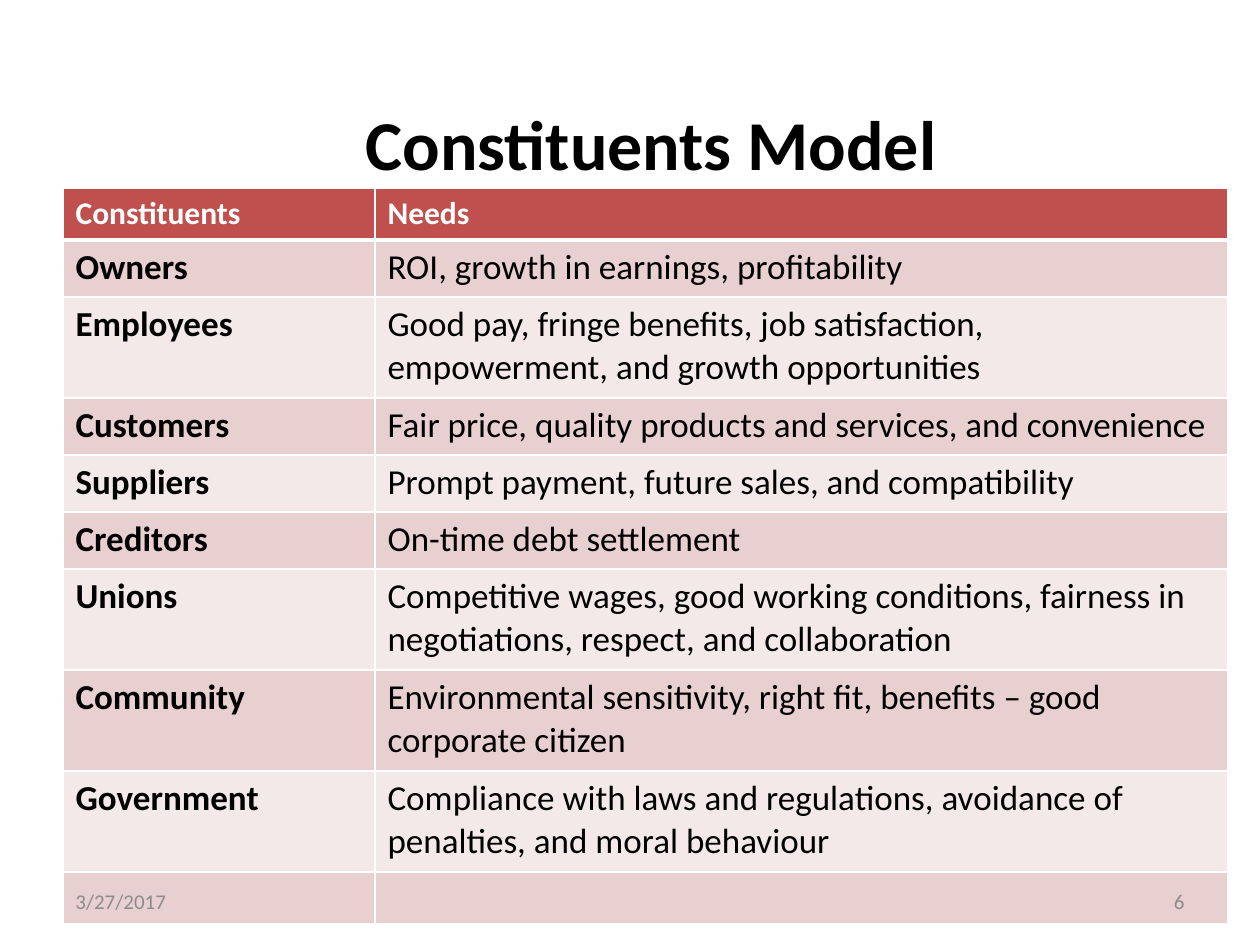
import dataclasses

import lxml.etree
import pptx
import pptx.dml.color
import pptx.enum.text
import pptx.oxml.ns
import pptx.util

EMU_PER_PX = 914400 / 126
ALIGN = pptx.enum.text.PP_ALIGN
ANCHOR = pptx.enum.text.MSO_ANCHOR


@dataclasses.dataclass(frozen=True)
class Theme:
    font: str = "Calibri"
    ink: str = "000000"
    white: str = "FFFFFF"
    muted: str = "8C8C8C"
    header: str = "C0504D"
    bands: tuple = ("E8D0D0", "F4E9E9")
    title_size: int = 40
    header_size: int = 18
    body_size: int = 20
    footer_size: int = 12
    border: int = 1
    header_border: int = 3


THEME = Theme()
COLUMN_WIDTHS = (312, 853)
EDGE_ROW, ONE_LINE_ROW, TWO_LINE_ROW = 52, 57, 101
HEADINGS = ("Constituents", "Needs")
CONSTITUENTS = (
    ("Owners", "ROI, growth in earnings, profitability", ONE_LINE_ROW),
    ("Employees", "Good pay, fringe benefits, job satisfaction,  empowerment, and growth opportunities", TWO_LINE_ROW),
    ("Customers", "Fair price, quality products and services, and convenience", ONE_LINE_ROW),
    ("Suppliers", "Prompt payment, future sales, and compatibility", ONE_LINE_ROW),
    ("Creditors", "On-time debt settlement", ONE_LINE_ROW),
    ("Unions", "Competitive wages, good working conditions, fairness in negotiations, respect, and collaboration", TWO_LINE_ROW),
    ("Community", "Environmental sensitivity, right fit, benefits – good corporate citizen", TWO_LINE_ROW),
    ("Government", "Compliance with laws and regulations, avoidance of penalties, and moral behaviour", TWO_LINE_ROW),
)


def px(length):
    return pptx.util.Emu(round(length * EMU_PER_PX))


def color(value):
    return pptx.dml.color.RGBColor.from_string(value)


def write_text(text_frame, text, *, size, ink=THEME.ink, bold=False, align=ALIGN.LEFT):
    paragraph = text_frame.paragraphs[0]
    paragraph.alignment = align
    run = paragraph.add_run()
    run.text = text
    run.font.name = THEME.font
    run.font.size = pptx.util.Pt(size)
    run.font.bold = bold
    run.font.color.rgb = color(ink)


def add_title(slide, text):
    title = slide.shapes.title
    title.left, title.top, title.width, title.height = map(px, (84, 63, 1134, 158))
    title.text_frame.vertical_anchor = ANCHOR.MIDDLE
    write_text(title.text_frame, text, size=THEME.title_size, bold=True, align=ALIGN.CENTER)


def add_footer(slide, text, left, align):
    box = slide.shapes.add_textbox(px(left), px(876), px(294), px(50))
    box.text_frame.word_wrap = True
    box.text_frame.vertical_anchor = ANCHOR.MIDDLE
    write_text(box.text_frame, text, size=THEME.footer_size, ink=THEME.muted, align=align)


def format_cell(cell, fill, top=THEME.border, bottom=THEME.border):
    properties = cell._tc.get_or_add_tcPr()
    qualified = pptx.oxml.ns.qn
    widths = {"lnL": THEME.border, "lnR": THEME.border, "lnT": top, "lnB": bottom}
    for side, width in widths.items():
        line = lxml.etree.SubElement(properties, qualified(f"a:{side}"), w=str(pptx.util.Pt(width)))
        solid = lxml.etree.SubElement(line, qualified("a:solidFill"))
        lxml.etree.SubElement(solid, qualified("a:srgbClr"), val=THEME.white)
    cell.fill.solid()
    cell.fill.fore_color.rgb = color(fill)


def add_constituents_table(slide):
    heights = [EDGE_ROW, *(height for _, _, height in CONSTITUENTS), EDGE_ROW]
    frame = slide.shapes.add_table(
        len(heights), len(COLUMN_WIDTHS), px(63), px(188), px(sum(COLUMN_WIDTHS)), px(sum(heights))
    )
    table = frame.table
    for column, width in zip(table.columns, COLUMN_WIDTHS):
        column.width = px(width)
    for row, height in zip(table.rows, heights):
        row.height = px(height)

    for cell, heading in zip(table.rows[0].cells, HEADINGS):
        format_cell(cell, THEME.header, bottom=THEME.header_border)
        write_text(cell.text_frame, heading, size=THEME.header_size, ink=THEME.white, bold=True)

    for index in range(1, len(heights)):
        top = THEME.header_border if index == 1 else THEME.border
        for cell in table.rows[index].cells:
            format_cell(cell, THEME.bands[(index - 1) % 2], top=top)

    for index, (name, needs, _) in enumerate(CONSTITUENTS, start=1):
        write_text(table.cell(index, 0).text_frame, name, size=THEME.body_size, bold=True)
        write_text(table.cell(index, 1).text_frame, needs, size=THEME.body_size)


def main():
    presentation = pptx.Presentation()
    presentation.slide_width, presentation.slide_height = px(1260), px(945)
    slide = presentation.slides.add_slide(presentation.slide_layouts[5])
    add_title(slide, "Constituents Model")
    add_constituents_table(slide)
    add_footer(slide, "3/27/2017", 63, ALIGN.LEFT)
    add_footer(slide, "6", 903, ALIGN.RIGHT)
    presentation.save("out.pptx")


if __name__ == "__main__":
    main()
